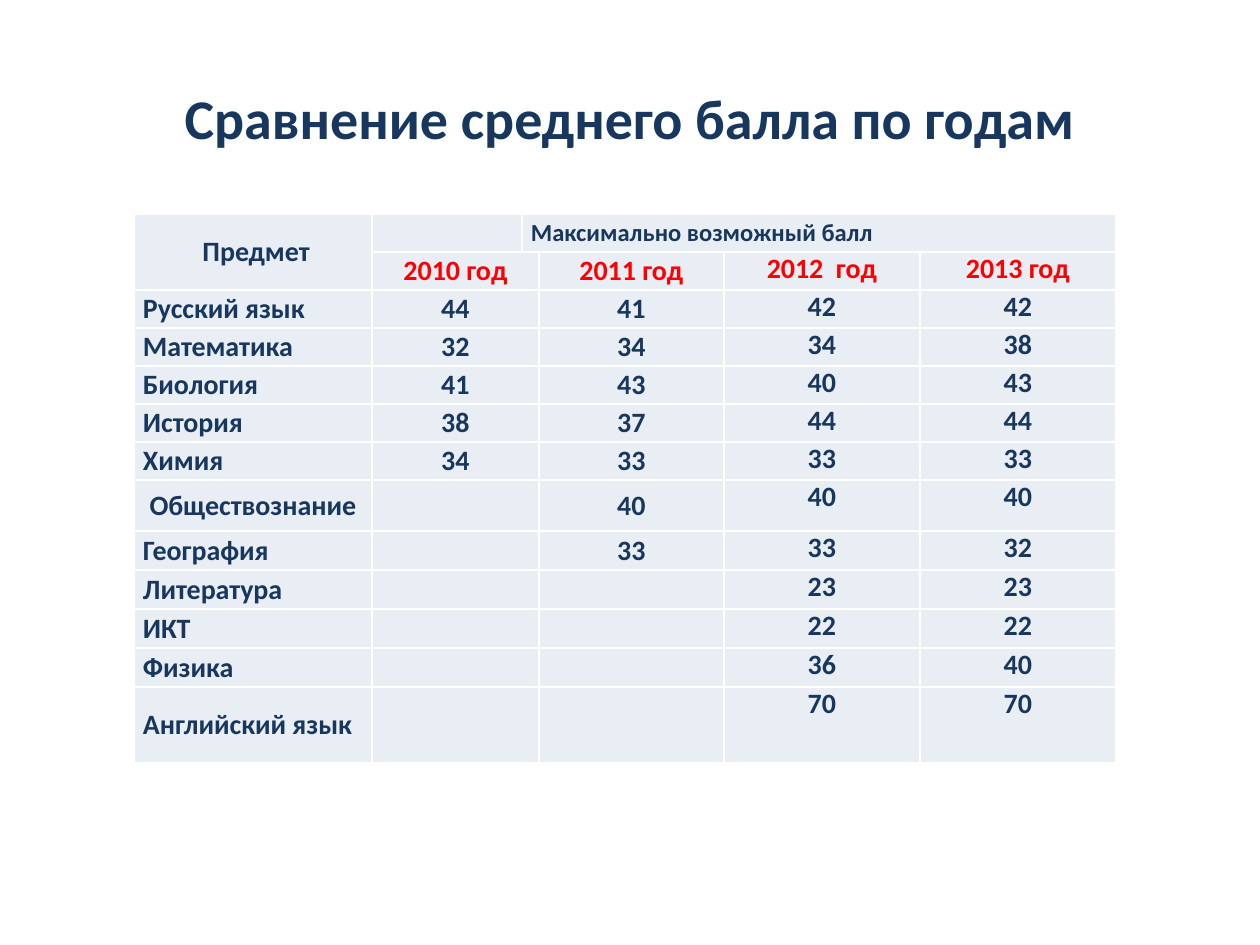
from pptx import Presentation
from pptx.dml.color import RGBColor
from pptx.enum.text import MSO_ANCHOR, PP_ALIGN
from pptx.util import Emu, Pt

LEFT, MID = PP_ALIGN.LEFT, PP_ALIGN.CENTER
TOP, CENTRE = MSO_ANCHOR.TOP, MSO_ANCHOR.MIDDLE
NAVY = RGBColor(0x17, 0x37, 0x5E)
RED = RGBColor(0xFF, 0x00, 0x00)
PALE = RGBColor(0xE9, 0xED, 0xF4)

TITLE = "Сравнение среднего балла по годам"
HEAD = " Предмет"
SPAN = "Максимально возможный балл"
YEARS = ["2010 год", "2011 год", "2012  год", "2013 год"]
SCORES = [
    ("Русский язык", 44, 41, 42, 42),
    ("Математика", 32, 34, 34, 38),
    ("Биология", 41, 43, 40, 43),
    ("История", 38, 37, 44, 44),
    ("Химия", 34, 33, 33, 33),
    ("Обществознание", "", 40, 40, 40),
    ("География", "", 33, 33, 32),
    ("Литература", "", "", 23, 23),
    ("ИКТ", "", "", 22, 22),
    ("Физика", "", "", 36, 40),
    ("Английский язык", "", "", 70, 70),
]
WIDTHS = [238, 150, 17, 185, 196, 196]
HEIGHTS = [38] * 7 + [51] + [39] * 4 + [76]
YEAR_COLS = [1, 3, 4, 5]
FONT = {"name": "Calibri", "bold": True}
INSETS = {"margin_left": 9, "margin_right": 9, "margin_top": 0, "margin_bottom": 0}


def px(n):
    return Emu(round(n * 914400 / 126))


def write(frame, text, size, color, align):
    par = frame.paragraphs[0]
    par.alignment = align
    run = par.add_run()
    run.text = str(text)
    for key, val in {**FONT, "size": Pt(size)}.items():
        setattr(run.font, key, val)
    run.font.color.rgb = color


def fill_cell(row, col, text, size=16, color=NAVY, align=MID, anchor=CENTRE):
    cell = table.cell(row, col)
    cell.vertical_anchor = anchor
    write(cell.text_frame, text, size, color, align)


def fill_years(row, vals, color):
    for col, val in zip(YEAR_COLS, vals):
        fill_cell(row, col, val, color=color, anchor=TOP if col > 3 else CENTRE)


deck = Presentation()
deck.slide_width, deck.slide_height = px(1260), px(945)
slide = deck.slides.add_slide(deck.slide_layouts[5])

title = slide.shapes.title
title.left, title.top, title.width, title.height = map(px, (63, 38, 1134, 158))
title.text_frame.vertical_anchor = CENTRE
write(title.text_frame, TITLE, 32, NAVY, MID)

box = map(px, (134, 214, sum(WIDTHS), sum(HEIGHTS)))
table = slide.shapes.add_table(len(HEIGHTS), len(WIDTHS), *box).table
table.first_row = table.horz_banding = False
for col, wide in zip(table.columns, WIDTHS):
    col.width = px(wide)
for row, high in zip(table.rows, HEIGHTS):
    row.height = px(high)
for cell in table.iter_cells():
    cell.fill.solid()
    cell.fill.fore_color.rgb = PALE
    for key, val in INSETS.items():
        setattr(cell, key, px(val))

table.cell(0, 0).merge(table.cell(1, 0))
table.cell(0, 2).merge(table.cell(0, 5))
for row in range(1, len(HEIGHTS)):
    table.cell(row, 1).merge(table.cell(row, 2))

fill_cell(0, 0, HEAD)
fill_cell(0, 1, "")
fill_cell(0, 2, SPAN, size=14, align=LEFT)
fill_years(1, YEARS, RED)
for row, (name, *vals) in enumerate(SCORES, 2):
    fill_cell(row, 0, name, align=MID if name == "Обществознание" else LEFT)
    fill_years(row, vals, NAVY)

deck.save("out.pptx")
